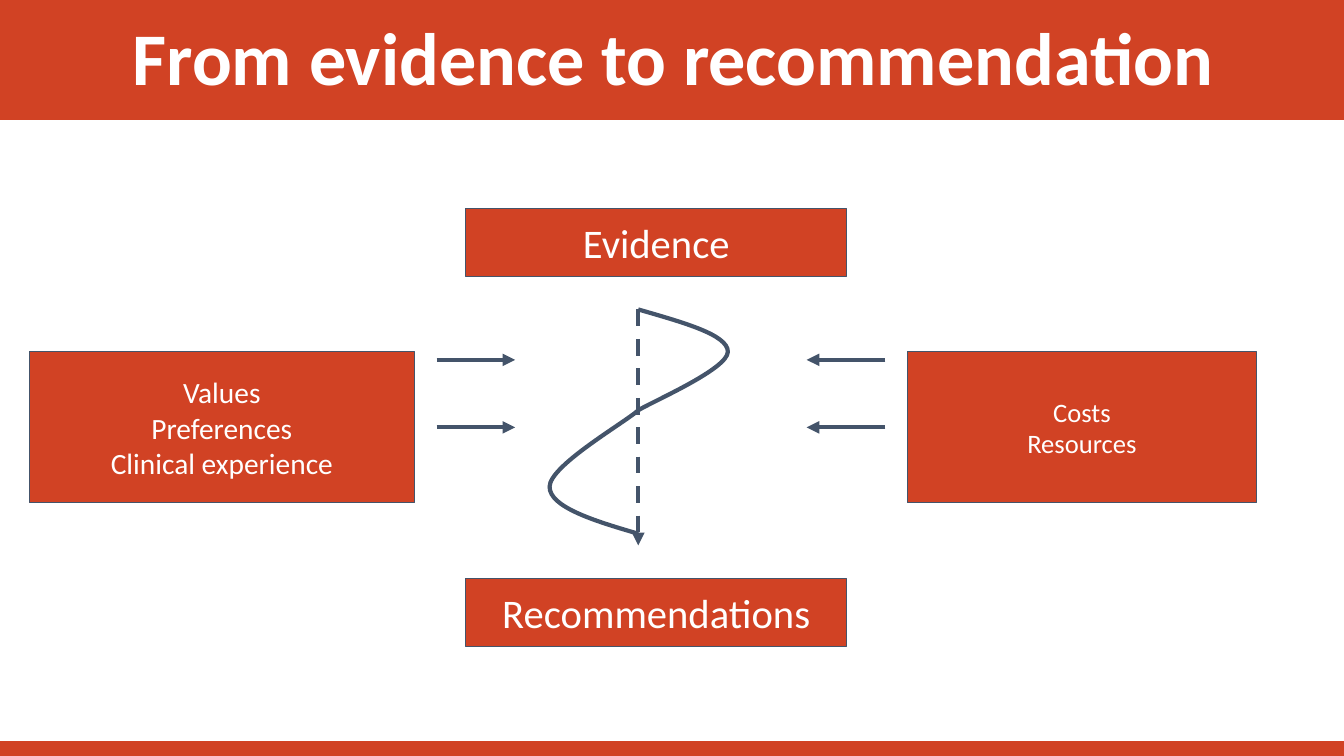
"""Build the slide that leads from evidence to recommendation."""
from dataclasses import dataclass

from lxml import etree
from pptx import Presentation, util as u
from pptx.dml.color import RGBColor
from pptx.enum import dml, shapes, text
from pptx.oxml.ns import qn

Point = tuple[float, float]


@dataclass(frozen=True)
class Theme:
    brick: RGBColor = RGBColor(0xD1, 0x42, 0x24)
    slate: RGBColor = RGBColor(0x44, 0x54, 0x6A)
    white: RGBColor = RGBColor(0xFF, 0xFF, 0xFF)
    font: str = "Calibri"
    title: int = 53
    large: int = 29
    mid: int = 21
    small: int = 19
    thin: float = 0.75
    edge: float = 1
    thick: float = 3


@dataclass(frozen=True)
class Box:
    x: float
    y: float
    w: float
    h: float
    lines: tuple[str, ...] = ()
    size: int = 0


@dataclass(frozen=True)
class Arrow:
    start: Point
    end: Point
    dash: bool = False


LOOK = Theme()
WIDE, HIGH = u.Inches(13.33), u.Inches(7.5)
MID_X, MID_Y = 47.49, 54.27
SIDE_Y, SIDE_H = 46.53, 20
CORE_X, CORE_W, CORE_H = 34.66, 28.36, 8.93

BARS = [Box(0, 0, 100, 15.73), Box(0, 98.13, 100, 1.87)]
BOXES = [
    Box(2.18, SIDE_Y, 28.66, SIDE_H,
        ("Values", "Preferences", "Clinical experience"), LOOK.mid),
    Box(CORE_X, 27.6, CORE_W, CORE_H, ("Evidence",), LOOK.large),
    Box(67.52, SIDE_Y, 25.96, SIDE_H, ("Costs", "Resources"), LOOK.small),
    Box(CORE_X, 76.53, CORE_W, CORE_H, ("Recommendations",), LOOK.large),
]
TITLE = Box(6.98, 2.53, 86.27, 11.87,
            ("From evidence to recommendation",), LOOK.title)
ARROWS = [Arrow((MID_X, 40.93), (MID_X, 72.13), True)] + [
    Arrow((tail, y), (tip, y))
    for tail, tip in ((32.48, 38.33), (65.87, 60.02))
    for y in (47.6, 56.53)
]
CURVES = [
    [(MID_X, 40.93), (50.86, 42.67), (54.16, 44.27), (54.16, 46.53),
     (54.16, 48.8), (48.61, 53.07), (MID_X, MID_Y)],
    [(MID_X, 70.6), (44.2, 68.9), (40.89, 67.07), (40.89, 64.4),
     (40.89, 61.6), (46.4, 56), (MID_X, MID_Y)],
]


def place(x: float, y: float) -> tuple[int, int]:
    """Turn shares of the slide, in percent, into lengths."""
    return round(WIDE * x / 100), round(HIGH * y / 100)


def style(item, traits: dict) -> None:
    """Set each trait on an item."""
    for name, value in traits.items():
        setattr(item, name, value)


def stroke(line, color: RGBColor, width: float) -> None:
    """Colour a line and set its width."""
    line.color.rgb = color
    line.width = u.Pt(width)


def write(shape, box: Box, wrap: bool, bold: bool, gap: float) -> None:
    """Fill a shape with centred lines of text."""
    frame = shape.text_frame
    style(frame, {"text": "\n".join(box.lines), "word_wrap": wrap,
                  "vertical_anchor": text.MSO_ANCHOR.MIDDLE})
    for para in frame.paragraphs:
        style(para, {"alignment": text.PP_ALIGN.CENTER, "line_spacing": gap})
        style(para.font, {"name": LOOK.font, "size": u.Pt(box.size),
                          "bold": bold})
        para.font.color.rgb = LOOK.white


def block(slide, box: Box, color: RGBColor, width: float) -> None:
    """Draw a filled rectangle with its text."""
    shape = slide.shapes.add_shape(
        shapes.MSO_SHAPE.RECTANGLE, *place(box.x, box.y), *place(box.w, box.h))
    shape.shadow.inherit = False
    shape.fill.solid()
    shape.fill.fore_color.rgb = LOOK.brick
    stroke(shape.line, color, width)
    if box.lines:
        write(shape, box, False, False, 1.0)


def point(slide, arrow: Arrow) -> None:
    """Draw a straight arrow."""
    link = slide.shapes.add_connector(
        shapes.MSO_CONNECTOR.STRAIGHT, *place(*arrow.start), *place(*arrow.end))
    stroke(link.line, LOOK.slate, LOOK.thick)
    if arrow.dash:
        link.line.dash_style = dml.MSO_LINE.DASH
    props = link._element.spPr
    etree.SubElement(props.find(qn("a:ln")), qn("a:tailEnd"), type="triangle")
    etree.SubElement(props, qn("a:effectLst"))


def bend(slide, dots: list[Point]) -> None:
    """Draw a smooth curve through cubic control points."""
    spots = [place(*dot) for dot in dots]
    pen = slide.shapes.build_freeform(*spots[0])
    pen.add_line_segments(spots[1:], close=False)
    shape = pen.convert_to_shape()
    shape.shadow.inherit = False
    shape.fill.background()
    stroke(shape.line, LOOK.slate, LOOK.thick)
    legs = list(shape._element.iter(qn("a:lnTo")))
    track = legs[0].getparent()
    for i in range(0, len(legs), 3):
        cubic = etree.SubElement(track, qn("a:cubicBezTo"))
        for leg in legs[i:i + 3]:
            cubic.append(leg[0])
            track.remove(leg)


def main() -> None:
    """Draw and save the slide."""
    deck = Presentation()
    style(deck, {"slide_width": WIDE, "slide_height": HIGH})
    slide = deck.slides.add_slide(deck.slide_layouts[6])
    for bar in BARS:
        block(slide, bar, LOOK.brick, LOOK.edge)
    for box in BOXES:
        block(slide, box, LOOK.slate, LOOK.thin)
    for arrow in ARROWS:
        point(slide, arrow)
    for dots in CURVES:
        bend(slide, dots)
    head = slide.shapes.add_textbox(
        *place(TITLE.x, TITLE.y), *place(TITLE.w, TITLE.h))
    write(head, TITLE, True, True, 0.8)
    deck.save("out.pptx")


if __name__ == "__main__":
    main()
